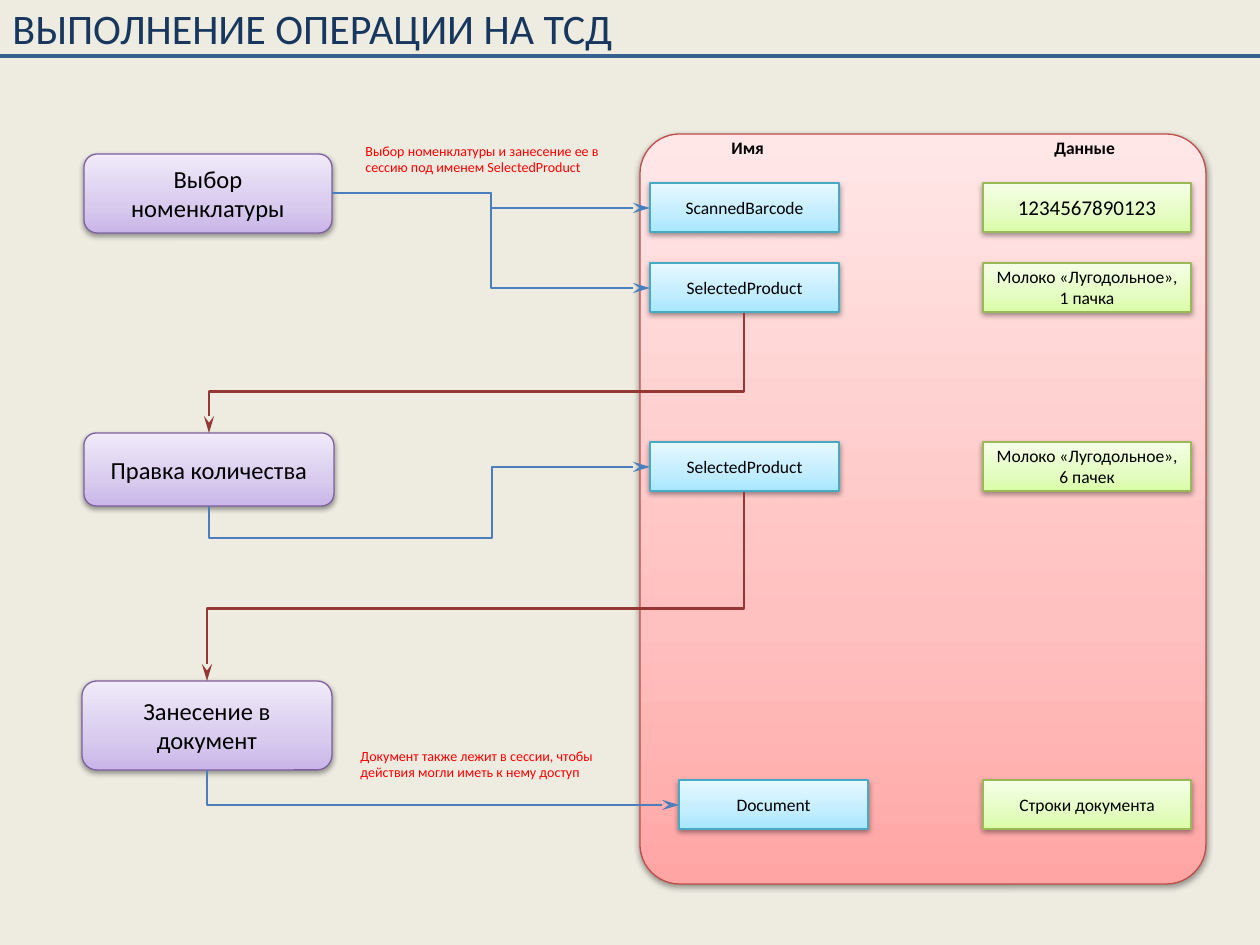
from copy import deepcopy

from lxml.etree import SubElement
from pptx import Presentation
from pptx.dml.color import RGBColor
from pptx.enum.shapes import MSO_CONNECTOR as CONN, MSO_SHAPE as SHAPE
from pptx.enum.text import MSO_ANCHOR as ANCHOR, MSO_AUTO_SIZE as AUTO, PP_ALIGN as ALIGN
from pptx.oxml.ns import qn
from pptx.util import Emu, Pt

PX = 914400 / 126
COLORS = {
    "bg": "EEECE1", "text": "000000", "note": "FF0000", "title": "17375E",
    "rule": "376092", "write": "4B7EBC", "read": "953735",
}
# Gradient from bottom to top, then the outline
STYLES = {
    "step": ("C9B5E8", "D8CBEE", "F0EAF9", "7D60A0"),
    "session": ("FFA6A5", "FFC0BF", "FFE7E7", "BF4C48"),
    "name": ("A7E6FF", "C1EDFF", "E7F8FF", "46AAC5"),
    "data": ("DAFDA7", "E4FCC2", "F5FFE7", "98B955"),
}


def px(*values):
    return [Emu(round(v * PX)) for v in values]


def write(sp, text, size, color, bold=False, align=ALIGN.LEFT):
    p = sp.text_frame.paragraphs[0]
    p.text = text
    p.alignment = align
    font = p.runs[0].font
    font.name, font.size, font.bold = "Calibri", Pt(size), bold
    font.color.rgb = RGBColor.from_string(COLORS[color])


prs = Presentation()
prs.slide_width, prs.slide_height = px(1260, 945)
s = prs.slides.add_slide(prs.slide_layouts[6])
s.background.fill.solid()
s.background.fill.fore_color.rgb = RGBColor.from_string(COLORS["bg"])

# Session panel, operation steps, and session entries
boxes = [
    ("session", 640, 134, 566, 750, "", 10),
    ("step", 84, 154, 248, 79, "Выбор номенклатуры", 14),
    ("step", 84, 433, 250, 73, "Правка количества", 14),
    ("step", 82, 681, 250, 89, "Занесение в документ", 14),
]
entries = [
    (650, 183, "ScannedBarcode", "1234567890123", 12),
    (650, 263, "SelectedProduct", "Молоко «Лугодольное», 1 пачка", 10),
    (650, 442, "SelectedProduct", "Молоко «Лугодольное», 6 пачек", 10),
    (679, 780, "Document", "Строки документа", 10),
]
for x, y, name, data, size in entries:
    boxes.append(("name", x, y, 189, 49, name, 10))
    boxes.append(("data", 983, y, 208, 49, data, size))

for style, x, y, w, h, text, size in boxes:
    rounded = style in ("step", "session")
    sp = s.shapes.add_shape(SHAPE.ROUNDED_RECTANGLE if rounded else SHAPE.RECTANGLE, *px(x, y, w, h))
    if style == "session":
        sp.adjustments[0] = 0.07
    *shades, outline = STYLES[style]
    sp.fill.gradient()
    sp.fill.gradient_angle = 90
    stops = sp._element.spPr.find(qn("a:gradFill")).find(qn("a:gsLst"))
    stops.append(deepcopy(stops[-1]))
    for stop, shade, position in zip(sp.fill.gradient_stops, shades, (0, 0.35, 1)):
        stop.color.rgb = RGBColor.from_string(shade)
        stop.position = position
    sp.line.color.rgb = RGBColor.from_string(outline)
    sp.line.width = Pt(0.75)
    sp.shadow.inherit = False
    shadow = SubElement(sp._element.spPr.find(qn("a:effectLst")), qn("a:outerShdw"),
                        blurRad="40000", dist="20000", dir="5400000", rotWithShape="0")
    black = SubElement(shadow, qn("a:srgbClr"), val="000000")
    SubElement(black, qn("a:alpha"), val="38000")
    if text:
        tf = sp.text_frame
        tf.word_wrap = True
        tf.vertical_anchor = ANCHOR.MIDDLE
        write(sp, text, size, "text", align=ALIGN.CENTER)

labels = [
    (0, -4, 1260, 63, "ВЫПОЛНЕНИЕ ОПЕРАЦИИ НА ТСД", 24, "title", False, True),
    (353, 136, 268, 47, "Выбор номенклатуры и занесение ее в сессию под именем SelectedProduct",
     8, "note", False, True),
    (348, 741, 282, 47, "Документ также лежит в сессии, чтобы действия могли иметь к нему доступ",
     8, "note", False, True),
    (719, 131, 69, 34, "Имя", 10, "text", True, False),
    (1042, 131, 89, 34, "Данные", 10, "text", True, False),
]
for x, y, w, h, text, size, color, bold, wrap in labels:
    sp = s.shapes.add_textbox(*px(x, y, w, h))
    sp.text_frame.word_wrap = wrap
    sp.text_frame.auto_size = AUTO.SHAPE_TO_FIT_TEXT
    write(sp, text, size, color, bold)

# Start, end, rotation, preset, bend positions (thousandths of a percent), color
links = [
    (0, 56, 1260, 56, 0, "line", [], "rule"),
    (332, 193, 650, 288, 0, "bentConnector3", [50000], "write"),
    (332, 193, 650, 208, 0, "bentConnector3", [50000], "write"),
    (744, 313, 209, 433, 90, "bentConnector3", [65300], "read"),
    (209, 506, 650, 467, 90, "bentConnector4", [-82600, 64200], "write"),
    (744, 492, 207, 681, 90, "bentConnector3", [61800], "read"),
    (207, 770, 679, 805, 270, "bentConnector2", [], "write"),
]
for x1, y1, x2, y2, turn, preset, bends, color in links:
    cx, cy = (x1 + x2) / 2, (y1 + y2) / 2
    dx, dy = x1 - cx, y1 - cy
    # Undo the rotation to get the unrotated frame
    dx, dy = {0: (dx, dy), 90: (dy, -dx), 270: (-dy, dx)}[turn]
    link = s.shapes.add_connector(CONN.ELBOW, *px(cx + dx, cy + dy, cx - dx, cy - dy))
    link.line.color.rgb = RGBColor.from_string(COLORS[color])
    link.line.width = Pt(2.25 if preset == "line" else 1.5)
    pr = link._element.spPr
    if turn:
        pr.find(qn("a:xfrm")).set("rot", str(turn * 60000))
    geom = pr.find(qn("a:prstGeom"))
    geom.set("prst", preset)
    guides = geom.find(qn("a:avLst"))
    for i, bend in enumerate(bends, 1):
        SubElement(guides, qn("a:gd"), name=f"adj{i}", fmla=f"val {bend}")
    if preset != "line":
        SubElement(pr.find(qn("a:ln")), qn("a:tailEnd"), type="stealth", w="med", len="lg")
    SubElement(pr, qn("a:effectLst"))

prs.save("out.pptx")
